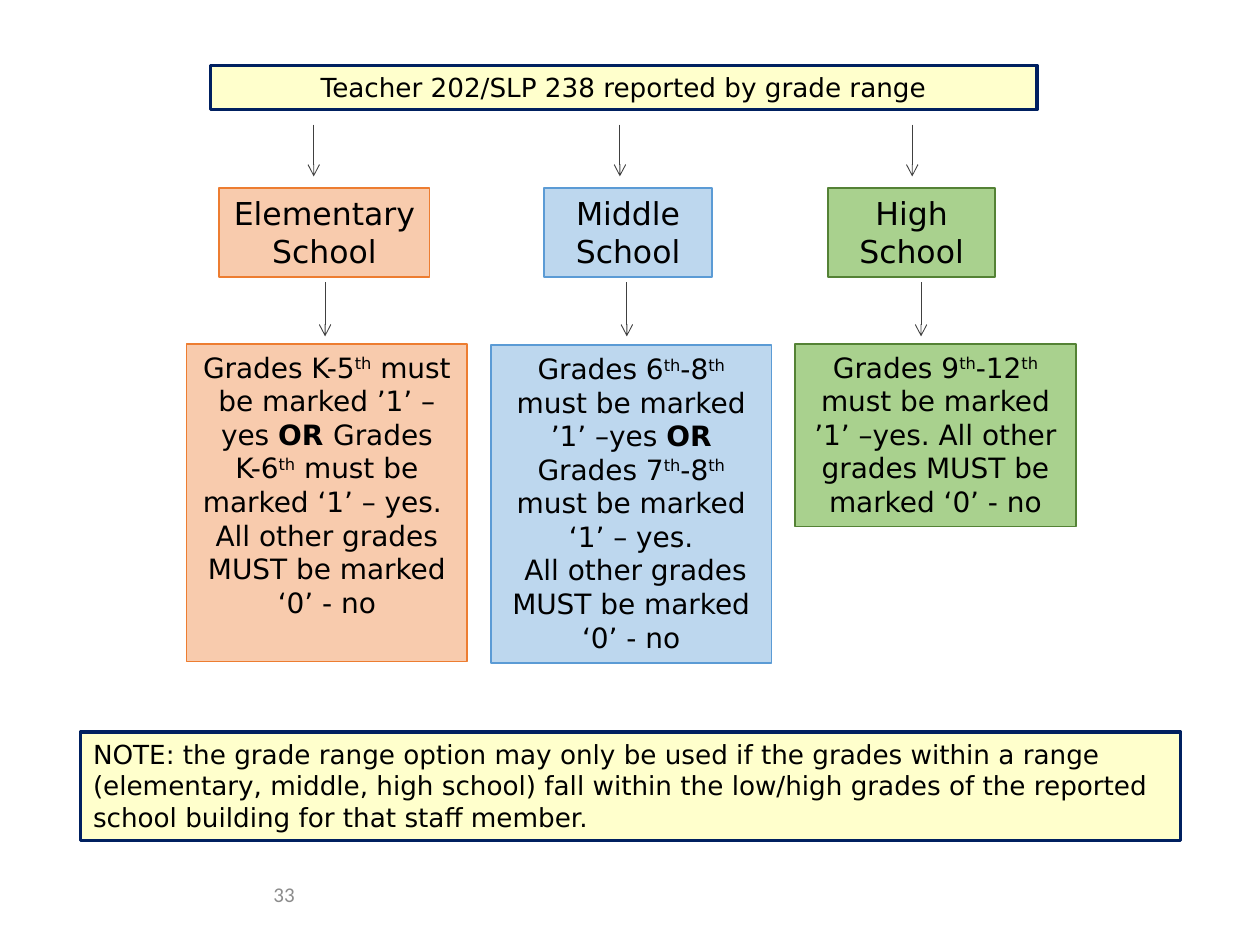
import pptx
import pptx.dml.color
import pptx.enum.shapes
import pptx.enum.text
import pptx.oxml
import pptx.oxml.ns
import pptx.util

ALIGN = pptx.enum.text.PP_ALIGN
ANCHOR = pptx.enum.text.MSO_ANCHOR
BODY_FONT = "DejaVu Sans"
BLACK = "000000"
COLUMN_LEFT, COLUMN_STEP, COLUMN_WIDTH = 1.48, 2.415, 2.23
SCHOOL_TOP, SCHOOL_HEIGHT = 1.49, 0.71
UPPER_ARROW_TOP, UPPER_ARROW_BOTTOM = 0.99, 1.4
LOWER_ARROW_TOP, LOWER_ARROW_BOTTOM = 2.24, 2.67

SCHOOLS = [
    {
        "name": "Elementary School", "fill": "F8CBAD", "line": "ED7D31",
        "name_left": 1.74, "name_width": 1.67, "arrows": (2.49, 2.58),
        "rule_top": 2.73, "rule_height": 2.52,
        "rule": [
            "Grades K-5|th| must be marked ’1’ –yes |OR |Grades K-6|th| must be marked ‘1’ – yes. ",
            "All other grades MUST be marked ‘0’ - no",
        ],
    },
    {
        "name": "Middle School", "fill": "BDD7EE", "line": "5B9BD5",
        "name_left": 4.32, "name_width": 1.33, "arrows": (4.92, 4.975),
        "rule_top": 2.74, "rule_height": 2.52,
        "rule": [
            "Grades 6|th|-8|th| must be marked ’1’ –yes |OR |Grades 7|th|-8|th| must be marked ‘1’ – yes.",
            " All other grades MUST be marked ‘0’ - no",
        ],
    },
    {
        "name": "High School", "fill": "A9D18E", "line": "548235",
        "name_left": 6.57, "name_width": 1.33, "arrows": (7.24, 7.31),
        "rule_top": 2.73, "rule_height": 1.45,
        "rule": [
            "Grades 9|th|-12|th| must be marked ’1’ –yes. All other grades MUST be marked ‘0’ - no",
        ],
    },
]


def colour(value):
    return pptx.dml.color.RGBColor.from_string(value)


def inches(*lengths):
    return [pptx.util.Inches(length) for length in lengths]


def write(frame, lines, size, align=ALIGN.CENTER, font=BODY_FONT, ink=BLACK, anchor=ANCHOR.TOP):
    frame.word_wrap = True
    frame.vertical_anchor = anchor
    for index, line in enumerate(lines):
        paragraph = frame.add_paragraph() if index else frame.paragraphs[0]
        paragraph.alignment = align
        paragraph.font.size = pptx.util.Pt(size)
        paragraph.font.name = font
        paragraph.font.color.rgb = colour(ink)
        for part in line.split("|"):
            run = paragraph.add_run()
            run.text = part
            if part == "th":
                run.font._element.set("baseline", "30000")
            elif part == "OR ":
                run.font.bold = True


def add_box(slide, area, fill, line, weight, lines, size, align=ALIGN.CENTER):
    box = slide.shapes.add_shape(pptx.enum.shapes.MSO_SHAPE.RECTANGLE, *inches(*area))
    box.shadow.inherit = False
    box.fill.solid()
    box.fill.fore_color.rgb = colour(fill)
    box.line.color.rgb = colour(line)
    box.line.width = pptx.util.Pt(weight)
    write(box.text_frame, lines, size, align)


def add_down_arrow(slide, x, top, bottom):
    arrow = slide.shapes.add_connector(
        pptx.enum.shapes.MSO_CONNECTOR.STRAIGHT, *inches(x, top, x, bottom))
    arrow.line.color.rgb = colour("404040")
    arrow.line.width = pptx.util.Pt(0.5)
    head = pptx.oxml.parse_xml(f'<a:tailEnd {pptx.oxml.ns.nsdecls("a")} type="arrow"/>')
    arrow.line._get_or_add_ln().append(head)
    no_shadow = pptx.oxml.parse_xml(f'<a:effectLst {pptx.oxml.ns.nsdecls("a")}/>')
    arrow._element.spPr.append(no_shadow)


def add_school(slide, column, school):
    name_area = (school["name_left"], SCHOOL_TOP, school["name_width"], SCHOOL_HEIGHT)
    rule_area = (COLUMN_LEFT + column * COLUMN_STEP, school["rule_top"],
                 COLUMN_WIDTH, school["rule_height"])
    for area, lines, size in ((name_area, [school["name"]], 18), (rule_area, school["rule"], 16)):
        add_box(slide, area, school["fill"], school["line"], 1, lines, size)
    upper, lower = school["arrows"]
    add_down_arrow(slide, upper, UPPER_ARROW_TOP, UPPER_ARROW_BOTTOM)
    add_down_arrow(slide, lower, LOWER_ARROW_TOP, LOWER_ARROW_BOTTOM)


def add_banner(slide, area, text, align):
    add_box(slide, area, "FFFFCC", "002060", 2, [text], 15, align)


def main():
    deck = pptx.Presentation()
    deck.slide_width, deck.slide_height = inches(10, 7.5)
    slide = deck.slides.add_slide(deck.slide_layouts[6])
    add_banner(slide, (1.67, 0.52, 6.56, 0.35),
               "Teacher 202/SLP 238 reported by grade range", ALIGN.CENTER)
    for column, school in enumerate(SCHOOLS):
        add_school(slide, column, school)
    add_banner(slide, (0.64, 5.81, 8.73, 0.86),
               "NOTE: the grade range option may only be used if the grades within a range "
               "(elementary, middle, high school) fall within the low/high grades of the "
               "reported school building for that staff member.", ALIGN.LEFT)
    page_number = slide.shapes.add_textbox(*inches(0.42, 6.95, 3.67, 0.3))
    write(page_number.text_frame, ["33"], 12, font="Calibri", ink="8C8C8C", anchor=ANCHOR.MIDDLE)
    deck.save("out.pptx")


if __name__ == "__main__":
    main()
